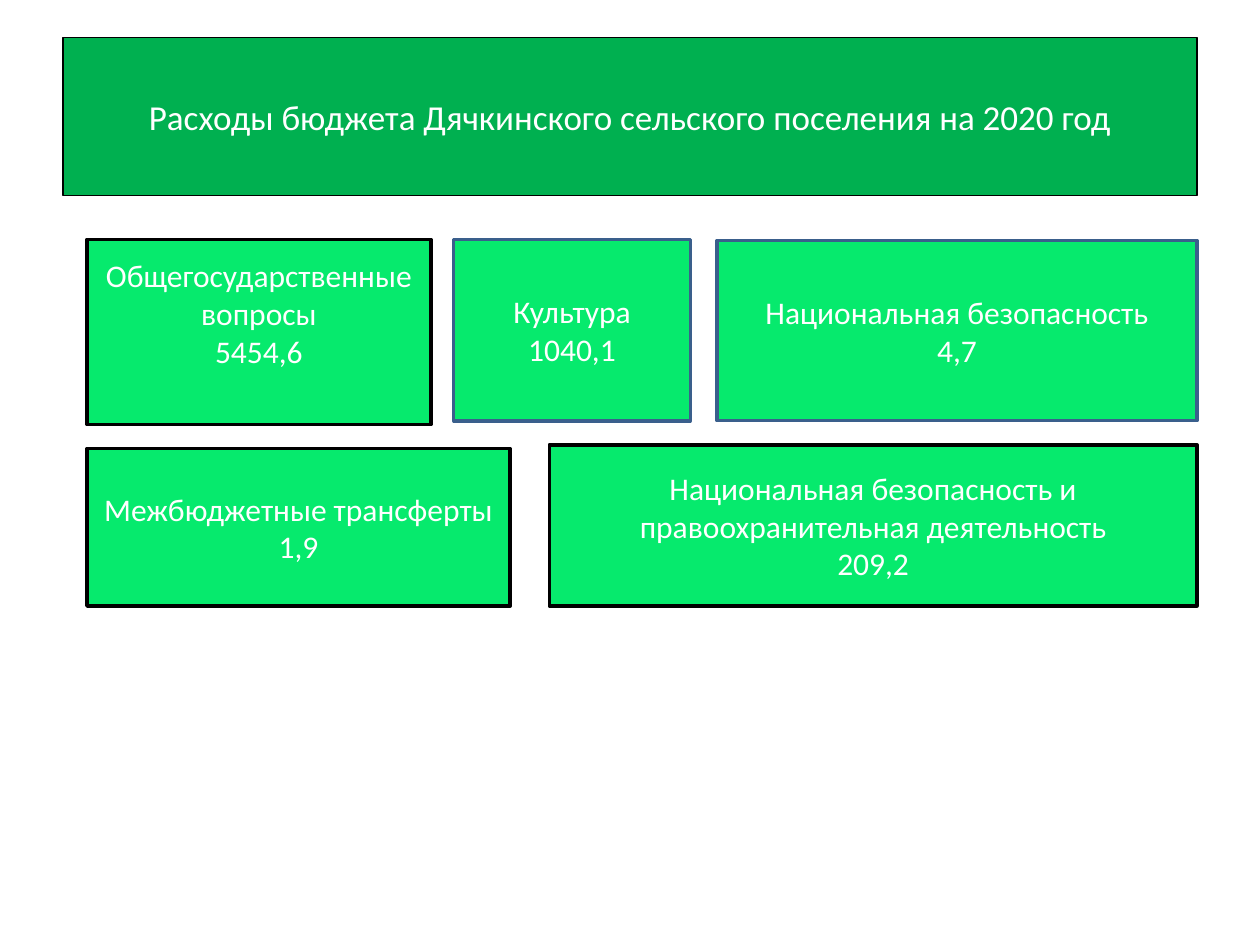
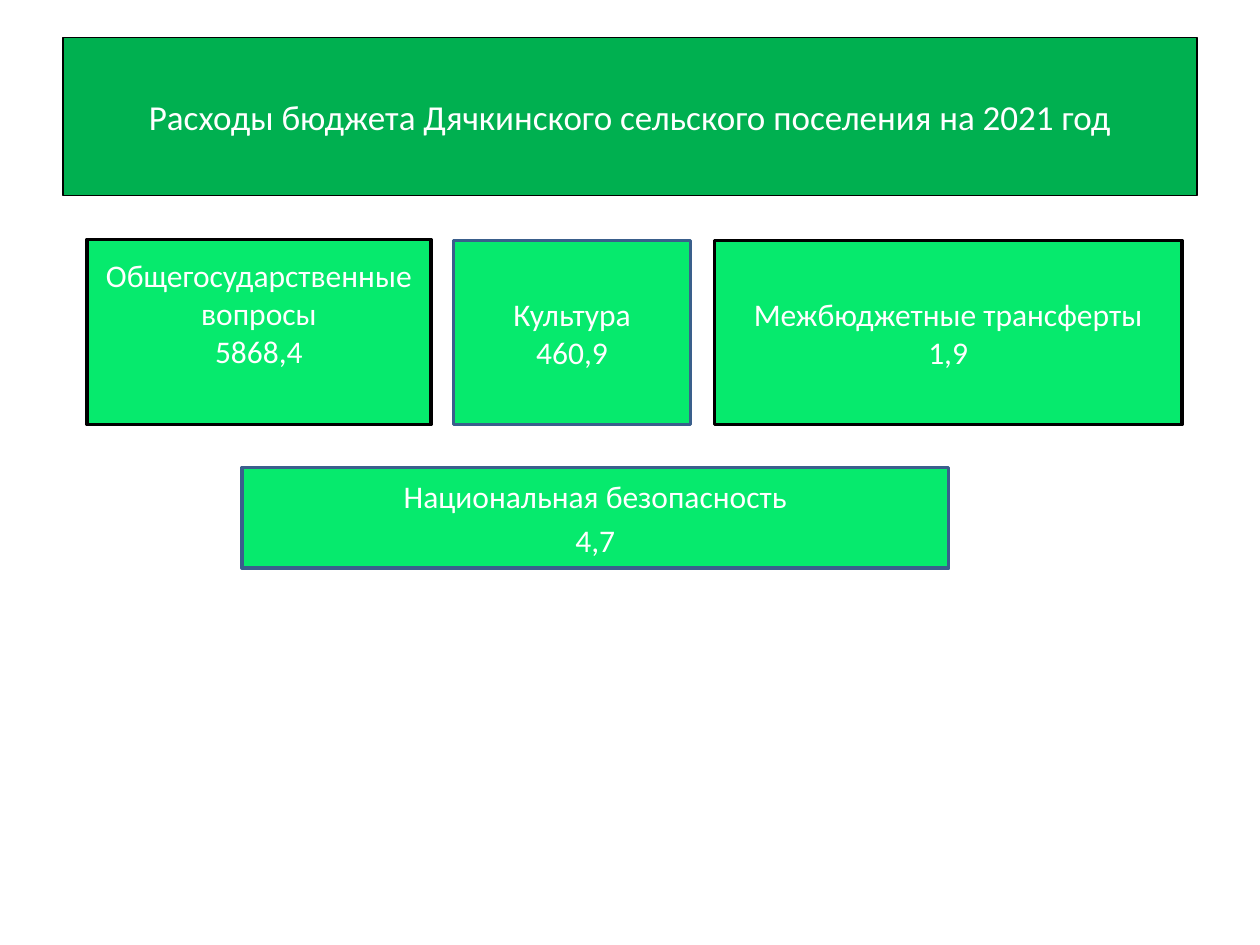
"""Build two slides of budget expenses of a rural settlement, one per year."""
from pptx import Presentation
from pptx.dml.color import RGBColor
from pptx.enum.shapes import MSO_SHAPE
from pptx.enum.text import MSO_ANCHOR, MSO_AUTO_SIZE, PP_ALIGN
from pptx.util import Inches, Pt
from lxml.etree import SubElement
from pptx.oxml.ns import qn

WHITE, BLACK, BLUE = "FFFFFF", "000000", "3A5F8C"
BAND, BOX = "00B050", "06EA6D"
GENERAL, CULTURE = "Общегосударственные вопросы", "Культура"
SAFETY, TRANSFERS = "Национальная безопасность", "Межбюджетные трансферты"
LAW = "Национальная безопасность и правоохранительная деятельность"


def rgb(color):
    return RGBColor.from_string(color)


def format_box(sp, text, at, fill=BOX, line=BLACK, width=2, size=18, bottom=0.05):
    sp.left, sp.top, sp.width, sp.height = [Inches(v) for v in at]
    sp.fill.solid()
    sp.fill.fore_color.rgb = rgb(fill)
    sp.line.color.rgb = rgb(line)
    sp.line.width = Pt(width)
    tf = sp.text_frame
    tf.word_wrap = True
    tf.auto_size = MSO_AUTO_SIZE.NONE
    tf.vertical_anchor = MSO_ANCHOR.MIDDLE
    tf.margin_bottom = Inches(bottom)
    tf.text = text
    for p in tf.paragraphs:
        p.alignment = PP_ALIGN.CENTER
        for r in p.runs:
            r.font.name = "Calibri"
            r.font.size = Pt(size)
            r.font.color.rgb = rgb(WHITE)


prs = Presentation()
prs.slide_width, prs.slide_height = Inches(10), Inches(7.5)
title_and_content, title_only = prs.slide_layouts[1], prs.slide_layouts[5]

years = [
    (2020, title_only, [
        (GENERAL, "5454,6", (0.69, 1.9, 2.73, 1.47), BLACK),
        (LAW, "209,2", (4.36, 3.53, 5.14, 1.28), BLACK),
        (SAFETY, "4,7", (5.69, 1.91, 3.81, 1.43), BLUE),
        (CULTURE, "1040,1", (3.6, 1.9, 1.88, 1.44), BLUE),
        (TRANSFERS, "1,9", (0.69, 3.56, 3.36, 1.25), BLACK),
    ]),
    (2021, title_and_content, [
        (GENERAL, "5868,4", (0.69, 1.9, 2.73, 1.47), BLACK),
        (CULTURE, "460,9", (3.6, 1.91, 1.88, 1.46), BLUE),
        (TRANSFERS, "1,9", (5.67, 1.91, 3.71, 1.46), BLACK),
    ]),
]

for year, layout, expenses in years:
    s = prs.slides.add_slide(layout)
    title = f"Расходы бюджета Дячкинского сельского поселения на {year} год"
    format_box(s.shapes.title, title, (0.5, 0.3, 9, 1.25), fill=BAND, width=0.75, size=20)
    for name, amount, at, line in expenses:
        sp = s.shapes.add_shape(MSO_SHAPE.RECTANGLE, 0, 0, 0, 0)
        sp.shadow.inherit = False
        bottom = 0.35 if name == GENERAL else 0.05
        format_box(sp, f"{name}\n{amount}", at, line=line, bottom=bottom)

body = s.placeholders[1]
format_box(body, f"{SAFETY}\n4,7", (1.92, 3.71, 5.61, 0.8), line=BLUE)
for p in body.text_frame.paragraphs:
    pPr = p._p.get_or_add_pPr()
    pPr.set("marL", "0")
    pPr.set("indent", "0")
    SubElement(pPr, qn("a:buNone"))

prs.save("out.pptx")
